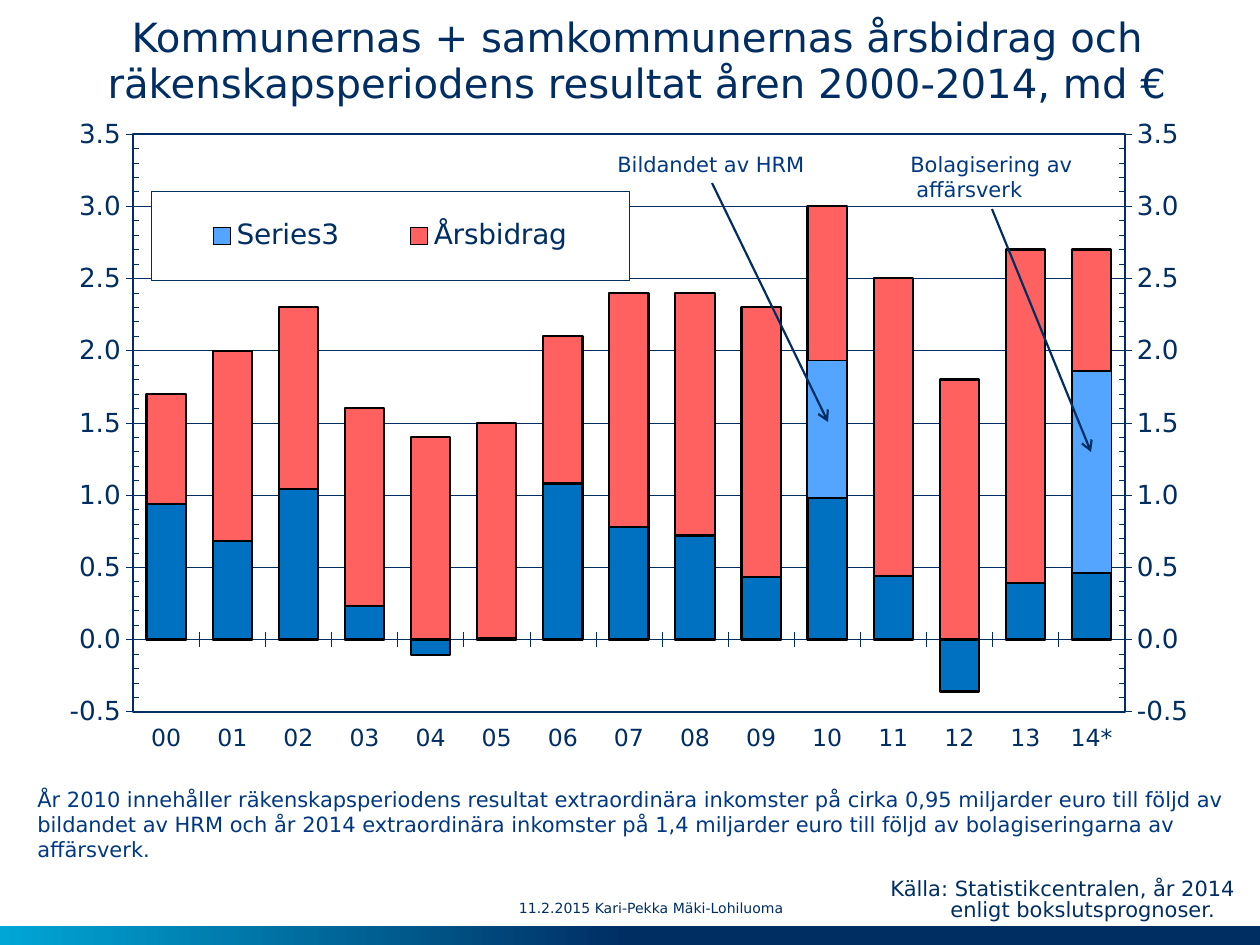
import copy

import pptx
import pptx.chart.data
import pptx.dml.color
import pptx.enum.chart
import pptx.enum.dml
import pptx.enum.shapes
import pptx.enum.text
import pptx.oxml
import pptx.oxml.ns
import pptx.util

RGB = pptx.dml.color.RGBColor
NAVY = RGB(0x00, 0x2E, 0x63)
NOTE_BLUE = RGB(0x00, 0x38, 0x82)
CYAN = RGB(0x00, 0xA6, 0xD6)
RED = RGB(0xFF, 0x61, 0x61)
BLUE = RGB(0x00, 0x70, 0xC0)
LIGHT_BLUE = RGB(0x53, 0xA5, 0xFF)
BLACK = RGB(0, 0, 0)
FONT = "DejaVu Sans"
PX = 914400 / 126  # 126 px to the inch

CATEGORIES = [f"{year:02d}" for year in range(14)] + ["14*"]
MARGIN = [1.7, 2, 2.3, 1.6, 1.4, 1.5, 2.1, 2.4, 2.4, 2.3, 3, 2.5, 1.8, 2.7, 2.7]
RESULT = [0.94, 0.68, 1.04, 0.23, -0.11, 0.01, 1.08, 0.78, 0.72, 0.43,
          0.98, 0.44, -0.36, 0.39, 0.46]
EXTRAORDINARY = [None] * 10 + [0.95] + [None] * 3 + [1.4]
# name, values, fill colour, outline width
SERIES = [("Årsbidrag", MARGIN, RED, 1.25),
          ("Series 2", RESULT, BLUE, 1.25),
          ("Series3", EXTRAORDINARY, LIGHT_BLUE, 0.75)]


def emu(*lengths):
    return [round(length * PX) for length in lengths]


def style_font(font, size, color=NAVY):
    font.name = FONT
    font.size = pptx.util.Pt(size)
    font.bold = False
    font.color.rgb = color


def xml(body):
    """Parse one chart or drawing element, adding its namespaces."""
    tag, rest = body[:body.index(">")], body[body.index(">"):]
    slash = "/" if tag.endswith("/") else ""
    tag = tag.rstrip("/")
    return pptx.oxml.parse_xml(f"{tag} {pptx.oxml.ns.nsdecls('c', 'a')}{slash}{rest}")


def add_text(slide, box, lines, size, color=NAVY, wrap=True, inset=True,
             indent=0, spacing=None, anchor=None):
    """Lines of text; those after the first are indented by px."""
    frame = slide.shapes.add_textbox(*emu(*box)).text_frame
    frame.word_wrap = wrap
    if anchor is not None:
        frame.vertical_anchor = anchor
    if not inset:
        frame.margin_left = frame.margin_right = frame.margin_top = frame.margin_bottom = 0
    for number, line in enumerate(lines):
        paragraph = frame.add_paragraph() if number else frame.paragraphs[0]
        paragraph.text = line
        if number and indent:
            paragraph._p.get_or_add_pPr().set("marL", str(emu(indent)[0]))
        if spacing:
            paragraph.line_spacing = spacing
        style_font(paragraph.font, size, color)


def add_title(slide, box, text):
    title = slide.shapes.title
    title.left, title.top, title.width, title.height = emu(*box)
    frame = title.text_frame
    frame.text = text
    frame.word_wrap = True
    frame.auto_size = pptx.enum.text.MSO_AUTO_SIZE.NONE
    frame.vertical_anchor = pptx.enum.text.MSO_ANCHOR.TOP
    frame.margin_left = frame.margin_right = frame.margin_top = frame.margin_bottom = 0
    paragraph = frame.paragraphs[0]
    paragraph.alignment = pptx.enum.text.PP_ALIGN.CENTER
    paragraph.line_spacing = 0.95
    style_font(paragraph.font, 23)


def add_bottom_band(slide, box):
    band = slide.shapes.add_shape(pptx.enum.shapes.MSO_SHAPE.RECTANGLE, *emu(*box))
    band.shadow.inherit = False
    band.line.fill.background()
    band.fill.gradient()
    band.fill.gradient_angle = 180
    for stop, (position, color) in zip(band.fill.gradient_stops, [(0.5, NAVY), (1, CYAN)]):
        stop.position = position
        stop.color.rgb = color


def add_arrow(slide, start, end):
    arrow = slide.shapes.add_connector(
        pptx.enum.shapes.MSO_CONNECTOR.STRAIGHT, *emu(*start, *end))
    arrow.line.color.rgb = NAVY
    arrow.line.width = pptx.util.Pt(1.25)
    arrow.line._get_or_add_ln().append(xml('<a:tailEnd type="arrow"/>'))
    arrow._element.spPr.append(xml("<a:effectLst/>"))


def manual_layout(x, y, width, height, inner=False):
    target = '<c:layoutTarget val="inner"/>' if inner else ""
    return xml(f'<c:layout><c:manualLayout>{target}<c:xMode val="edge"/><c:yMode val="edge"/>'
               f'<c:x val="{x}"/><c:y val="{y}"/><c:w val="{width}"/><c:h val="{height}"/>'
               "</c:manualLayout></c:layout>")


def outline(width, fill="<a:noFill/>"):
    return xml(f'<c:spPr>{fill}<a:ln w="{round(width * 12700)}"><a:solidFill>'
               f'<a:srgbClr val="{NAVY}"/></a:solidFill></a:ln></c:spPr>')


def format_axes(chart):
    tick = pptx.enum.chart.XL_TICK_MARK
    category, value = chart.category_axis, chart.value_axis
    for axis, size in ((category, 13.5), (value, 15)):
        axis.major_tick_mark = tick.CROSS
        axis.format.line.color.rgb = NAVY
        axis.format.line.width = pptx.util.Pt(0.3)
        style_font(axis.tick_labels.font, size)
    category.tick_label_position = pptx.enum.chart.XL_TICK_LABEL_POSITION.LOW
    value.minor_tick_mark = tick.INSIDE
    value.minimum_scale, value.maximum_scale = -0.5, 3.5
    value.major_unit, value.minor_unit = 0.5, 0.1
    value.tick_labels.number_format = "0.0"
    value.tick_labels.number_format_is_linked = False
    grid = value.major_gridlines.format.line
    grid.color.rgb = NAVY
    grid.width = pptx.util.Pt(0.25)
    grid.dash_style = pptx.enum.dml.MSO_LINE.ROUND_DOT


def stack_on_right_axis(chart):
    """Move all series but the first to stacked columns on a second axis pair."""
    columns = chart._chartSpace.xpath(".//c:barChart")[0]
    stacked = copy.deepcopy(columns)
    for series in columns.xpath("c:ser")[1:]:
        columns.remove(series)
    stacked.remove(stacked.xpath("c:ser")[0])
    stacked.xpath("c:grouping")[0].set("val", "stacked")
    columns.addnext(stacked)
    for axis_id, new_id in zip(stacked.xpath("c:axId"), ("5001", "5002")):
        axis_id.set("val", new_id)

    category, value = chart.category_axis._element, chart.value_axis._element
    right_value, hidden_category = copy.deepcopy(value), copy.deepcopy(category)
    for axis, own, other in ((hidden_category, "5001", "5002"), (right_value, "5002", "5001")):
        axis.xpath("c:axId")[0].set("val", own)
        axis.xpath("c:crossAx")[0].set("val", other)
    hidden_category.xpath("c:delete")[0].set("val", "1")
    right_value.remove(right_value.xpath("c:majorGridlines")[0])
    right_value.xpath("c:axPos")[0].set("val", "r")
    right_value.xpath("c:crosses")[0].set("val", "max")
    value.addnext(right_value)
    right_value.addnext(hidden_category)
    chart.plots[1].overlap = 100


def add_legend(chart):
    chart.has_legend = True
    legend = chart.legend
    legend.position = pptx.enum.chart.XL_LEGEND_POSITION.RIGHT
    legend.include_in_layout = False
    style_font(legend.font, 16)
    element = legend._element
    for old in element.xpath("c:layout"):
        element.remove(old)
    position = element.xpath("c:legendPos")[0]
    position.addnext(manual_layout(0.098, 0.127, 0.4, 0.133))
    position.addnext(xml('<c:legendEntry><c:idx val="1"/><c:delete val="1"/></c:legendEntry>'))
    white = '<a:solidFill><a:srgbClr val="FFFFFF"/></a:solidFill>'
    element.xpath("c:overlay")[0].addnext(outline(0.25, white))


def add_column_chart(slide, box):
    data = pptx.chart.data.CategoryChartData()
    data.categories = CATEGORIES
    for name, values, _, _ in SERIES:
        data.add_series(name, values)
    chart = slide.shapes.add_chart(
        pptx.enum.chart.XL_CHART_TYPE.COLUMN_CLUSTERED, *emu(*box), data).chart
    chart.has_title = False
    style_font(chart.font, 16)
    chart.plots[0].gap_width = 68
    chart.plots[0].vary_by_categories = False
    for series, (_, _, color, width) in zip(chart.plots[0].series, SERIES):
        series.invert_if_negative = False
        series.format.fill.solid()
        series.format.fill.fore_color.rgb = color
        series.format.line.color.rgb = BLACK
        series.format.line.width = pptx.util.Pt(width)
    format_axes(chart)
    stack_on_right_axis(chart)
    add_legend(chart)

    # Plot frame and transparent chart background
    space = chart._chartSpace
    plot_area = space.xpath(".//c:plotArea")[0]
    for old in plot_area.xpath("c:layout"):
        plot_area.remove(old)
    plot_area.insert(0, manual_layout(0.083, 0.043, 0.829, 0.856, inner=True))
    plot_area.append(outline(1.25))
    space.xpath("c:chart")[0].addnext(
        xml("<c:spPr><a:noFill/><a:ln><a:noFill/></a:ln></c:spPr>"))


def add_callout(slide, box, lines, start, end):
    add_text(slide, box, lines, 12, NOTE_BLUE, wrap=False, indent=6)
    add_arrow(slide, start, end)


def main():
    deck = pptx.Presentation()
    deck.slide_width, deck.slide_height = emu(1260, 945)
    slide = deck.slides.add_slide(deck.slide_layouts[5])

    add_bottom_band(slide, (0, 926, 1260, 19))
    add_title(slide, (35, 16, 1206, 93),
              "Kommunernas + samkommunernas årsbidrag och "
              "räkenskapsperiodens resultat åren 2000-2014, md €")
    add_column_chart(slide, (34, 105, 1196, 675))
    add_callout(slide, (605, 145, 214, 38), ["Bildandet av HRM"], (712, 183), (828, 422))
    add_callout(slide, (898, 145, 188, 63), ["Bolagisering av", "affärsverk"],
                (992, 209), (1091, 452))

    # Explanation, date and source
    add_text(slide, (25, 780, 1250, 89),
             ["År 2010 innehåller räkenskapsperiodens resultat extraordinära inkomster på "
              "cirka 0,95 miljarder euro till följd av bildandet av HRM och år 2014 "
              "extraordinära inkomster på 1,4 miljarder euro till följd av "
              "bolagiseringarna av affärsverk."], 12, NOTE_BLUE)
    add_text(slide, (519, 890, 427, 36), ["11.2.2015 Kari-Pekka Mäki-Lohiluoma"], 8,
             inset=False, anchor=pptx.enum.text.MSO_ANCHOR.MIDDLE)
    add_text(slide, (878, 873, 397, 55),
             ["Källa: Statistikcentralen, år 2014", "enligt bokslutsprognoser."], 12,
             indent=60, spacing=0.85)
    deck.save("out.pptx")


if __name__ == "__main__":
    main()
